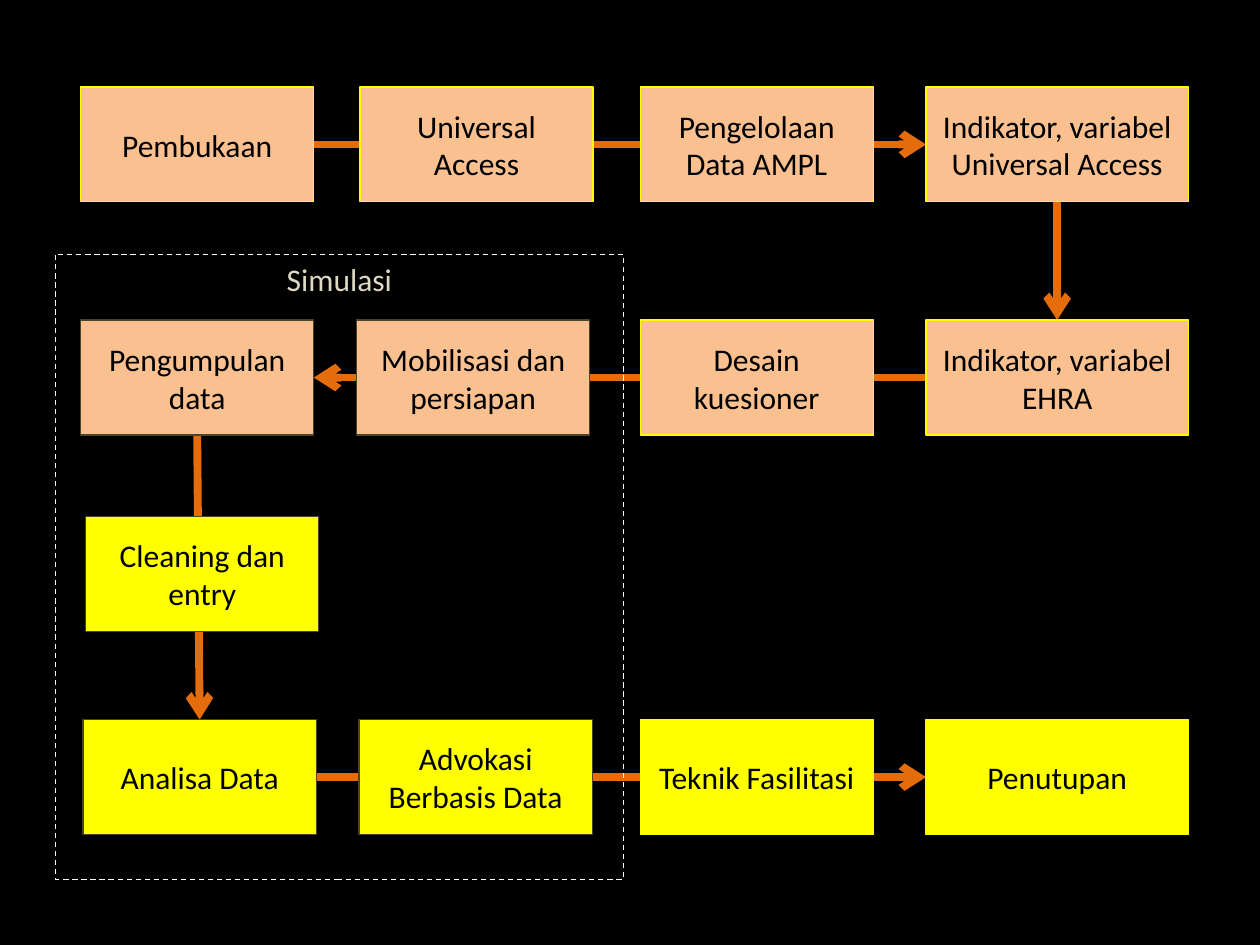
from lxml.etree import SubElement
from pptx import Presentation
from pptx.dml.color import RGBColor
from pptx.enum.dml import MSO_LINE
from pptx.enum.shapes import MSO_CONNECTOR, MSO_SHAPE
from pptx.enum.text import MSO_ANCHOR, PP_ALIGN
from pptx.oxml.ns import qn
from pptx.util import Pt

BLACK = RGBColor(0x00, 0x00, 0x00)
WHITE = RGBColor(0xFF, 0xFF, 0xFF)
PEACH = RGBColor(0xFA, 0xC0, 0x90)
YELLOW = RGBColor(0xFF, 0xFF, 0x00)
BROWN = RGBColor(0x4A, 0x45, 0x2A)
SAND = RGBColor(0xDD, 0xD9, 0xC3)
ORANGE = RGBColor(0xE4, 0x6C, 0x0A)

TOP, LEFT, BOTTOM, RIGHT = range(4)
STEP_W, LAST_W, STEP_H = 133.2, 149.8, 65.7
COL_3, COL_4 = 365.8, 529.2
ROW_1, ROW_2, ROW_3, ROW_4 = 49.7, 182.9, 295.2, 411.2


def add_box(s, box, text, line, fill=None, color=BLACK, anchor=MSO_ANCHOR.MIDDLE):
    sp = s.shapes.add_shape(MSO_SHAPE.RECTANGLE, *map(Pt, box))
    sp.shadow.inherit = False
    if fill is None:
        sp.fill.background()
    else:
        sp.fill.solid()
        sp.fill.fore_color.rgb = fill
    sp.line.color.rgb = line
    sp.line.width = Pt(0.75)
    tf = sp.text_frame
    tf.text = text
    tf.word_wrap = True
    tf.vertical_anchor = anchor
    p = tf.paragraphs[0]
    p.alignment = PP_ALIGN.CENTER
    font = p.runs[0].font
    font.name, font.size, font.color.rgb = "Calibri", Pt(18), color
    return sp


def add_row(s, top, steps, fill, line):
    """Place one row of steps, given as (left, text), and return their boxes."""
    return [
        add_box(s, (left, top, LAST_W if left == COL_4 else STEP_W, STEP_H),
                text, line, fill)
        for left, text in steps
    ]


def add_simulation_frame(s, box):
    sp = add_box(s, box, "Simulasi", WHITE, color=SAND, anchor=MSO_ANCHOR.TOP)
    sp.line.dash_style = MSO_LINE.DASH


def add_arrow(s, start, start_side, end, end_side):
    """Join two boxes with an arrow that runs behind every box."""
    line = s.shapes.add_connector(MSO_CONNECTOR.STRAIGHT, 0, 0, 0, 0)
    line.begin_connect(start, start_side)
    line.end_connect(end, end_side)
    line.line.color.rgb = ORANGE
    line.line.width = Pt(4.5)
    SubElement(line.line._get_or_add_ln(), qn("a:tailEnd"), type="arrow")
    SubElement(line._element.spPr, qn("a:effectLst"))
    s.shapes[0]._element.addprevious(line._element)


def add_flow(s):
    add_simulation_frame(s, (31.7, 145.3, 324.5, 357.2))
    opening, _, _, universal = add_row(s, ROW_1, [
        (46.1, "Pembukaan"),
        (205.7, "Universal Access"),
        (COL_3, "Pengelolaan Data AMPL"),
        (COL_4, "Indikator, variabel Universal Access"),
    ], PEACH, YELLOW)
    _, ehra = add_row(s, ROW_2, [
        (COL_3, "Desain kuesioner"),
        (COL_4, "Indikator, variabel EHRA"),
    ], PEACH, YELLOW)
    collection, _ = add_row(s, ROW_2, [
        (46.1, "Pengumpulan data"),
        (203.8, "Mobilisasi dan persiapan"),
    ], PEACH, BROWN)
    add_row(s, ROW_3, [(49, "Cleaning dan entry")], YELLOW, BROWN)
    analysis, _ = add_row(s, ROW_4, [
        (47.5, "Analisa Data"),
        (205.2, "Advokasi Berbasis Data"),
    ], YELLOW, BROWN)
    _, closing = add_row(s, ROW_4, [
        (COL_3, "Teknik Fasilitasi"),
        (COL_4, "Penutupan"),
    ], YELLOW, YELLOW)

    add_arrow(s, opening, RIGHT, universal, LEFT)
    add_arrow(s, universal, BOTTOM, ehra, TOP)
    add_arrow(s, ehra, LEFT, collection, RIGHT)
    add_arrow(s, collection, BOTTOM, analysis, TOP)
    add_arrow(s, analysis, RIGHT, closing, LEFT)


def main():
    prs = Presentation()
    prs.slide_width, prs.slide_height = Pt(720), Pt(540)
    s = prs.slides.add_slide(prs.slide_layouts[6])
    s.background.fill.solid()
    s.background.fill.fore_color.rgb = BLACK
    add_flow(s)
    prs.save("out.pptx")


if __name__ == "__main__":
    main()
